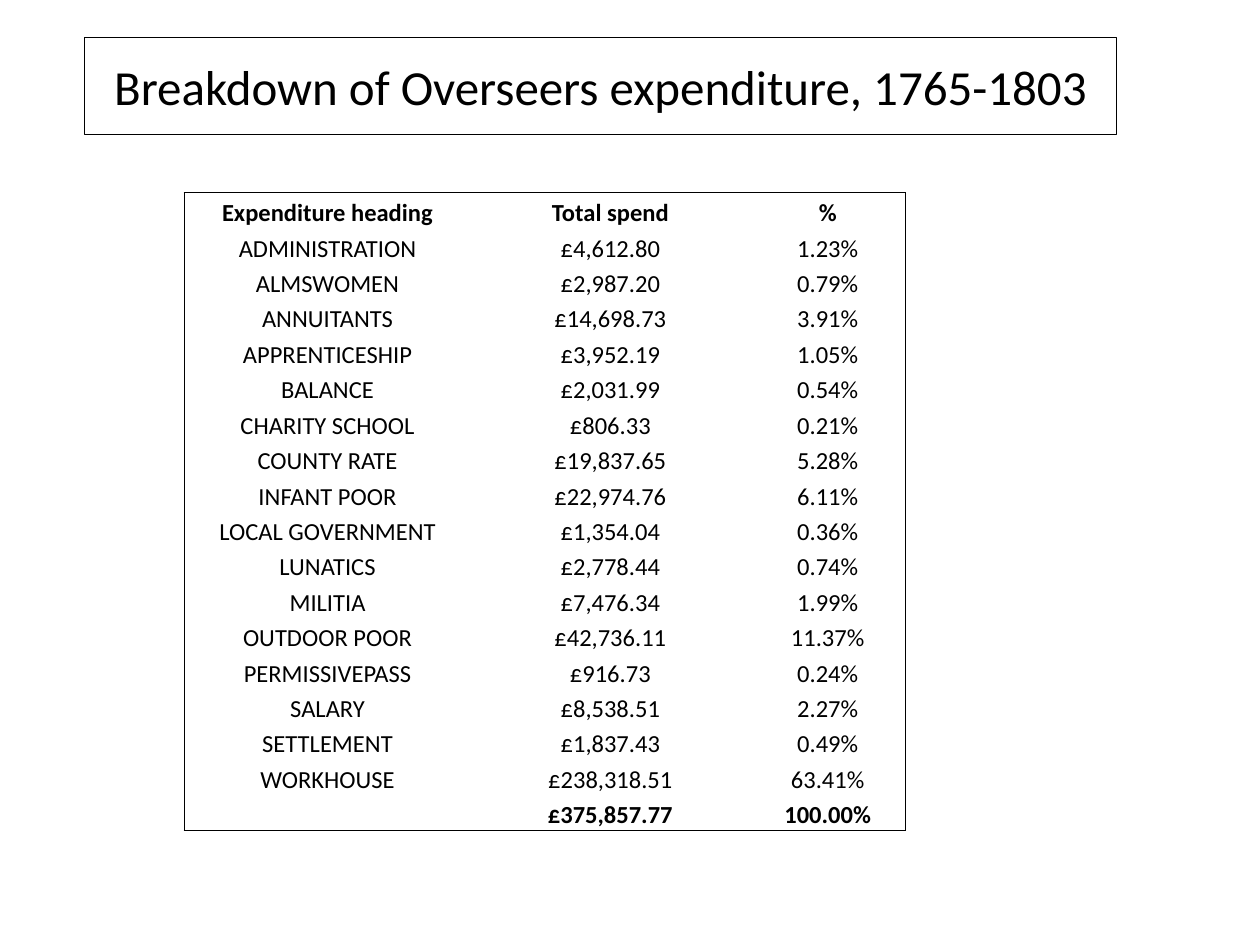
from lxml.etree import SubElement
from pptx import Presentation
from pptx.dml.color import RGBColor
from pptx.enum.shapes import MSO_SHAPE
from pptx.enum.text import MSO_ANCHOR, PP_ALIGN
from pptx.oxml.ns import qn
from pptx.util import Inches, Pt

COLORS = {"ink": "000000"}
FONT = "Calibri"
TITLE = "Breakdown of Overseers expenditure, 1765-1803"
ROWS = [
    ("Expenditure heading", "Total spend", "%"),
    ("ADMINISTRATION", "£4,612.80", "1.23%"),
    ("ALMSWOMEN", "£2,987.20", "0.79%"),
    ("ANNUITANTS", "£14,698.73", "3.91%"),
    ("APPRENTICESHIP", "£3,952.19", "1.05%"),
    ("BALANCE", "£2,031.99", "0.54%"),
    ("CHARITY SCHOOL", "£806.33", "0.21%"),
    ("COUNTY RATE", "£19,837.65", "5.28%"),
    ("INFANT POOR", "£22,974.76", "6.11%"),
    ("LOCAL GOVERNMENT", "£1,354.04", "0.36%"),
    ("LUNATICS", "£2,778.44", "0.74%"),
    ("MILITIA", "£7,476.34", "1.99%"),
    ("OUTDOOR POOR", "£42,736.11", "11.37%"),
    ("PERMISSIVEPASS", "£916.73", "0.24%"),
    ("SALARY", "£8,538.51", "2.27%"),
    ("SETTLEMENT", "£1,837.43", "0.49%"),
    ("WORKHOUSE", "£238,318.51", "63.41%"),
    ("", "£375,857.77", "100.00%"),
]
WIDTHS = [2.28, 2.21, 1.24]
HEIGHT = 5.06


def style(para, size, bold=False):
    para.alignment = PP_ALIGN.CENTER
    font = para.font
    font.name, font.size, font.bold = FONT, Pt(size), bold
    font.color.rgb = RGBColor.from_string(COLORS["ink"])


def border(cell, edges):
    props = cell._tc.get_or_add_tcPr()
    for side, shown in edges.items():
        line = SubElement(props, qn(f"a:ln{side}"), w=str(Pt(0.5)))
        if shown:
            fill = SubElement(line, qn("a:solidFill"))
            SubElement(fill, qn("a:srgbClr"), val=COLORS["ink"])
        else:
            SubElement(line, qn("a:noFill"))


def add_title(slide):
    box = slide.shapes.add_shape(
        MSO_SHAPE.RECTANGLE, Inches(0.67), Inches(0.3), Inches(8.19), Inches(0.77))
    box.shadow.inherit = False
    box.fill.background()
    box.line.color.rgb = RGBColor.from_string(COLORS["ink"])
    box.line.width = Pt(0.75)
    frame = box.text_frame
    frame.word_wrap = True
    frame.vertical_anchor = MSO_ANCHOR.MIDDLE
    frame.text = TITLE
    style(frame.paragraphs[0], 28)


def add_costs(slide):
    last, end = len(ROWS) - 1, len(WIDTHS) - 1
    table = slide.shapes.add_table(
        len(ROWS), len(WIDTHS), Inches(1.46), Inches(1.53),
        Inches(sum(WIDTHS)), Inches(HEIGHT)).table
    table.first_row = table.horz_banding = False
    for col, width in zip(table.columns, WIDTHS):
        col.width = Inches(width)
    for r, row in enumerate(ROWS):
        table.rows[r].height = Inches(HEIGHT / len(ROWS))
        for c, text in enumerate(row):
            cell = table.cell(r, c)
            cell.text = text
            cell.vertical_anchor = MSO_ANCHOR.BOTTOM
            cell.margin_left = cell.margin_right = 0
            cell.margin_top = cell.margin_bottom = 0
            para = cell.text_frame.paragraphs[0]
            style(para, 14, r in (0, last))
            if not text:
                SubElement(para._p, qn("a:endParaRPr"), sz="1400")
            border(cell, {"L": c == 0, "R": c == end, "T": r == 0, "B": r == last})
            cell.fill.background()


def main():
    deck = Presentation()
    deck.slide_width, deck.slide_height = Inches(10), Inches(7.5)
    slide = deck.slides.add_slide(deck.slide_layouts[6])
    add_title(slide)
    add_costs(slide)
    deck.save("out.pptx")


if __name__ == "__main__":
    main()
